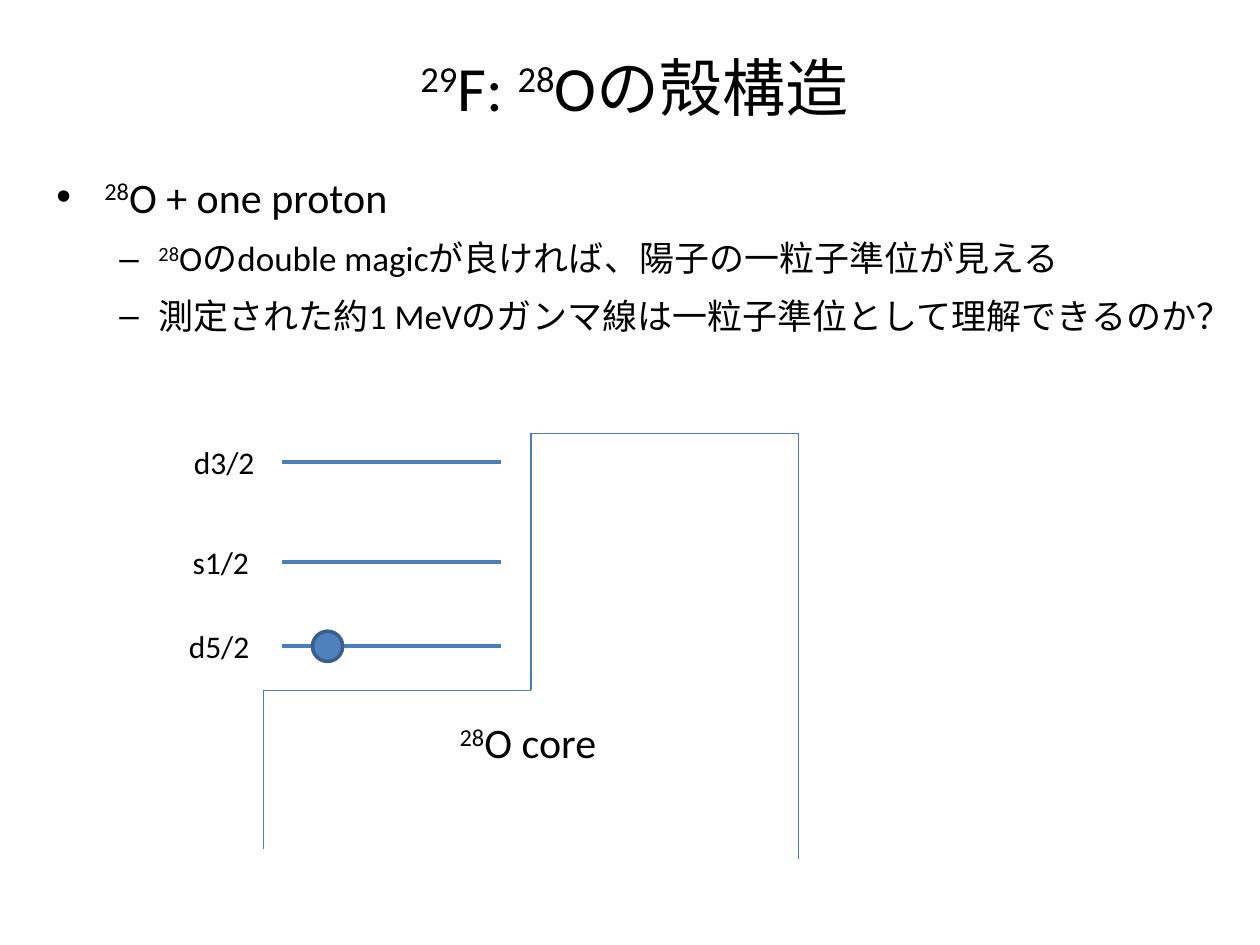
from dataclasses import dataclass
from itertools import pairwise

from lxml.etree import SubElement
from pptx import Presentation
from pptx.dml.color import RGBColor
from pptx.enum.shapes import MSO_CONNECTOR, MSO_SHAPE
from pptx.enum.text import MSO_ANCHOR, PP_ALIGN
from pptx.oxml.ns import qn
from pptx.util import Inches, Pt


@dataclass(frozen=True)
class Theme:
    font: str = "Calibri"
    ink: RGBColor = RGBColor(0, 0, 0)
    line: RGBColor = RGBColor(0x4B, 0x7E, 0xBC)
    fill: RGBColor = RGBColor(0x4F, 0x81, 0xBD)
    edge: RGBColor = RGBColor(0x3A, 0x5F, 0x8C)
    title: int = 36
    head: int = 24
    sub: int = 20
    label: int = 18


THEME = Theme()


def add_text(slide, left, top, width, height, wrap=True):
    box = slide.shapes.add_textbox(
        Inches(left), Inches(top), Inches(width), Inches(height))
    box.text_frame.word_wrap = wrap
    return box.text_frame


def write(para, text, size):
    """Fill a paragraph; every second part between ^ marks is raised."""
    for i, part in enumerate(text.split("^")):
        if not part:
            continue
        run = para.add_run()
        run.text = part
        run.font.name = THEME.font
        run.font.size = Pt(size)
        run.font.color.rgb = THEME.ink
        if i % 2:
            run.font._element.set("baseline", "30000")


def set_bullet(para, char, left, hang):
    props = para._p.get_or_add_pPr()
    props.set("marL", str(Inches(left)))
    props.set("indent", str(-Inches(hang)))
    SubElement(props, qn("a:buFont")).set("typeface", "Arial")
    SubElement(props, qn("a:buChar")).set("char", char)


def add_line(slide, start, end, width):
    line = slide.shapes.add_connector(
        MSO_CONNECTOR.STRAIGHT, *(Inches(v) for v in (*start, *end)))
    line.line.color.rgb = THEME.line
    line.line.width = Pt(width)
    SubElement(line._element.spPr, qn("a:effectLst"))


def add_title(slide, left, top, width, height):
    frame = add_text(slide, left, top, width, height)
    frame.vertical_anchor = MSO_ANCHOR.MIDDLE
    para = frame.paragraphs[0]
    para.alignment = PP_ALIGN.CENTER
    write(para, "^29^F: ^28^Oの殻構造", THEME.title)


def add_points(slide, left, top, width, height):
    frame = add_text(slide, left, top, width, height)
    points = [
        (0, "^28^O + one proton"),
        (1, "^28^Oのdouble magicが良ければ、陽子の一粒子準位が見える"),
        (1, "測定された約1 MeVのガンマ線は一粒子準位として理解できるのか？"),
    ]
    styles = [(THEME.head, "•", 0.38, 0.38), (THEME.sub, "–", 0.81, 0.31)]
    for i, (level, text) in enumerate(points):
        size, *bullet = styles[level]
        para = frame.add_paragraph() if i else frame.paragraphs[0]
        para.level = level
        para.line_spacing = 1.2
        para.space_before = Pt(size * 0.2)
        set_bullet(para, *bullet)
        write(para, text, size)


def add_shells(slide, left, top, width, height):
    """Draw the potential wall, the proton levels and the core label."""
    right, step, floor = left + width, left + width / 2, top + 2.04
    wall = [(left, top + height - 0.08), (left, floor), (step, floor),
            (step, top), (right, top), (right, top + height)]
    for start, end in pairwise(wall):
        add_line(slide, start, end, 0.75)

    levels = [("d3/2", 0.65, 0.23), ("s1/2", 0.66, 1.02), ("d5/2", 0.69, 1.69)]
    for name, shift, drop in levels:
        y = top + drop
        add_line(slide, (left + 0.15, y), (left + 1.89, y), 2.25)
        label = add_text(slide, left - shift, y - 0.2, 0.69, 0.4, wrap=False)
        write(label.paragraphs[0], name, THEME.label)

    size = 0.24
    proton = slide.shapes.add_shape(
        MSO_SHAPE.OVAL, Inches(left + 0.39), Inches(y - size / 2),
        Inches(size), Inches(size))
    proton.shadow.inherit = False
    proton.fill.solid()
    proton.fill.fore_color.rgb = THEME.fill
    proton.line.color.rgb = THEME.edge
    proton.line.width = Pt(2)

    core = add_text(slide, left + 1.46, floor + 0.16, 1.33, 0.5, wrap=False)
    write(core.paragraphs[0], "^28^O core", THEME.head)


def main():
    deck = Presentation()
    deck.slide_width, deck.slide_height = Inches(10), Inches(7.5)
    slide = deck.slides.add_slide(deck.slide_layouts[6])
    add_title(slide, 0.35, 0.3, 9.37, 0.77)
    add_points(slide, 0.35, 1.23, 9.37, 6.14)
    add_shells(slide, 2.09, 3.44, 4.25, 3.38)
    deck.save("out.pptx")


if __name__ == "__main__":
    main()
